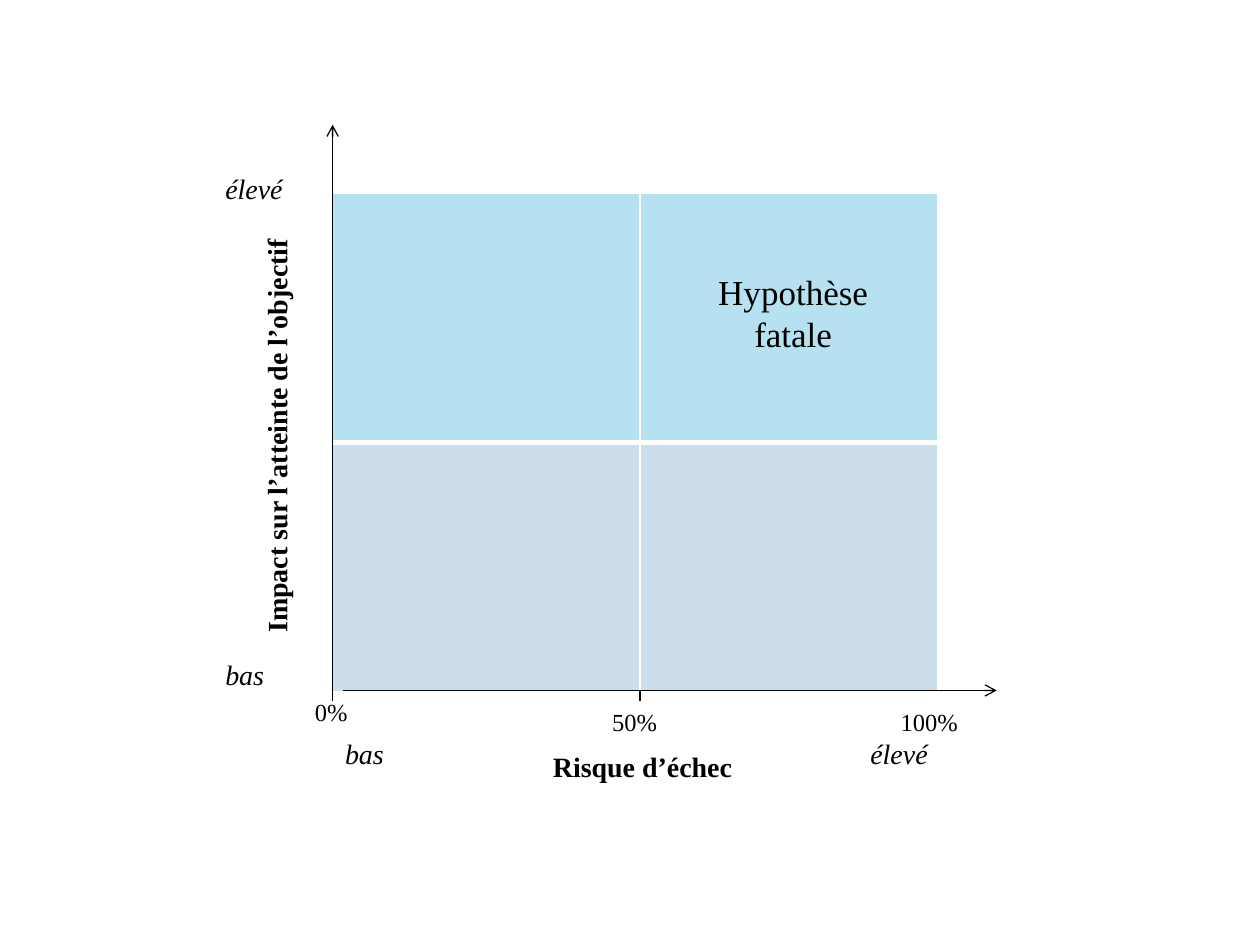
from lxml import etree
from pptx import Presentation, util as u
from pptx.dml.color import RGBColor
from pptx.enum import shapes, text
from pptx.oxml import ns

BLACK = RGBColor(0x00, 0x00, 0x00)
WHITE = RGBColor(0xFF, 0xFF, 0xFF)
HIGH = RGBColor(0x00, 0x99, 0xCC)
LOW = RGBColor(0xCC, 0xDE, 0xEC)
FONT = "Times New Roman"
LEFT, TOP = 2.64, 1.53
COLS, ROWS = (2.44, 2.36), (1.98, 1.98)
MIDDLE, BASE = LEFT + COLS[0], 5.48
TICK = 0.08
ITALIC, BOLD = {"italic": True}, {"bold": True}


def add_line(s, x1, y1, x2, y2, arrow=False):
    """Draw a thin black line, with an open arrowhead at its end if asked."""
    line = s.shapes.add_connector(shapes.MSO_CONNECTOR.STRAIGHT,
                                  *map(u.Inches, (x1, y1, x2, y2)))
    line.line.color.rgb = BLACK
    line.line.width = u.Pt(0.75)
    if arrow:
        etree.SubElement(line.line._get_or_add_ln(), ns.qn("a:tailEnd"), type="arrow")
    etree.SubElement(line._element.spPr, ns.qn("a:effectLst"))


def add_label(s, words, box, size=16, style=None, align=text.PP_ALIGN.LEFT, vert=None):
    """Place a wrapped line of text, turned if a direction is given."""
    tf = s.shapes.add_textbox(*map(u.Inches, box)).text_frame
    tf.word_wrap = True
    tf.auto_size = text.MSO_AUTO_SIZE.SHAPE_TO_FIT_TEXT
    if vert:
        tf._txBody.bodyPr.set("vert", vert)
    p = tf.paragraphs[0]
    p.alignment = align
    r = p.add_run()
    r.text = words
    r.font.color.rgb = BLACK
    formats = {"name": FONT, "size": u.Pt(size), **(style or {})}
    for key, value in formats.items():
        setattr(r.font, key, value)


def format_cell(cell, color, widths, alpha=None):
    """Give a cell its borders and its fill, see-through if alpha is set."""
    tc_pr = cell._tc.get_or_add_tcPr()
    for side, width in widths.items():
        ln = etree.SubElement(tc_pr, ns.qn(f"a:ln{side}"), w=str(u.Pt(width)))
        solid = etree.SubElement(ln, ns.qn("a:solidFill"))
        etree.SubElement(solid, ns.qn("a:srgbClr"), val=str(WHITE))
    cell.fill.solid()
    cell.fill.fore_color.rgb = color
    if alpha:
        clr = tc_pr.find(".//" + ns.qn("a:srgbClr") + f"[@val='{color}']")
        etree.SubElement(clr, ns.qn("a:alpha"), val=str(alpha * 1000))


def add_matrix(s):
    """Add the two by two risk table."""
    box = (LEFT, TOP, sum(COLS), sum(ROWS))
    table = s.shapes.add_table(len(ROWS), len(COLS), *map(u.Inches, box)).table
    for column, width in zip(table.columns, COLS):
        column.width = u.Inches(width)
    looks = ((HIGH, {"L": 1, "R": 1, "T": 1, "B": 3}, 29),
             (LOW, {"L": 1, "R": 1, "T": 3, "B": 1}, None))
    for row, height, look in zip(table.rows, ROWS, looks):
        row.height = u.Inches(height)
        for cell in row.cells:
            format_cell(cell, *look)


def add_axes(s):
    """Draw the two axes and their ticks."""
    add_line(s, LEFT, BASE, LEFT, 0.99, arrow=True)
    add_line(s, LEFT + TICK, BASE, 7.91, BASE, arrow=True)
    add_line(s, MIDDLE, BASE, MIDDLE - TICK, BASE)
    for x in (LEFT, MIDDLE):
        add_line(s, x, BASE, x, BASE + TICK)


def add_labels(s):
    """Write the axis titles, levels, percentages and the quadrant name."""
    levels = (("élevé", 6.81, 5.8), ("bas", LEFT, 5.8),
              ("bas", 1.69, 5.17), ("élevé", 1.69, 1.31))
    for words, x, y in levels:
        add_label(s, words, (x, y, 0.87, 0.37), style=ITALIC)
    percents = (("0%", 2.4, BASE, 0.63), ("50%", 4.76, BASE + TICK, 0.63),
                ("100%", 7.05, BASE + TICK, 0.95))
    for words, x, y, width in percents:
        add_label(s, words, (x, y, width, 0.34), 14)
    add_label(s, "Impact sur l’atteinte de l’objectif", (2.01, 1.76, 0.47, 3.4),
              style=BOLD, align=text.PP_ALIGN.CENTER, vert="vert270")
    add_label(s, "Risque d’échec", (4.29, 5.9, 2.52, 0.37), style=BOLD)
    add_label(s, "Hypothèse fatale", (5.27, 2.1, 2.05, 0.77), 20,
              align=text.PP_ALIGN.CENTER)


def main():
    """Build the slide and save it."""
    prs = Presentation()
    prs.slide_width, prs.slide_height = u.Inches(10), u.Inches(7.5)
    s = prs.slides.add_slide(prs.slide_layouts[6])
    add_matrix(s)
    add_axes(s)
    add_labels(s)
    prs.save("out.pptx")


if __name__ == "__main__":
    main()
